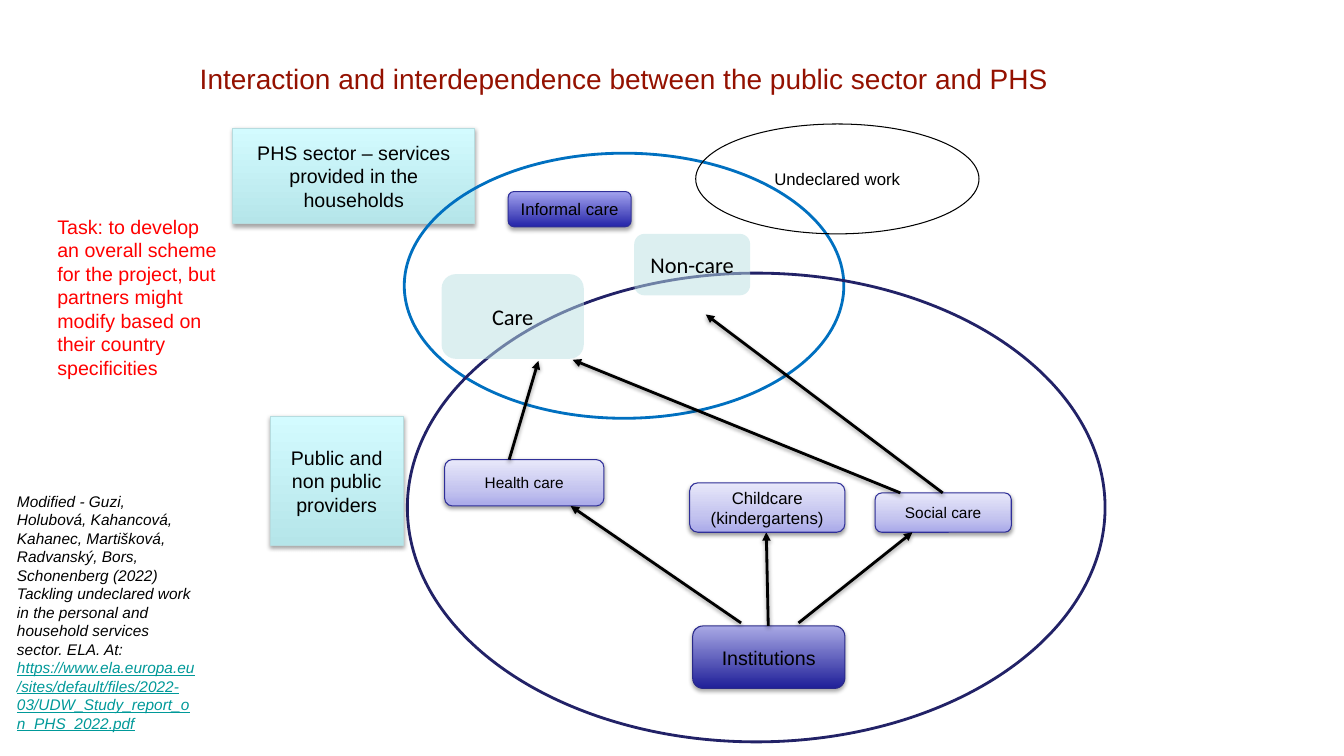
import copy

import pptx
import pptx.dml.color
import pptx.enum.shapes
import pptx.enum.text
import pptx.oxml
import pptx.oxml.ns
import pptx.util

PX = 9144  # 100 px to the inch
KIND = pptx.enum.shapes.MSO_SHAPE
ALIGN = pptx.enum.text.PP_ALIGN
ANCHOR = pptx.enum.text.MSO_ANCHOR
NS = pptx.oxml.ns.nsdecls("a")

# Each look: gradient from bottom to top, line colour, shadow opacity and distance
PALE = ([(0, "A9A9E9"), (35, "C4C4EF"), (100, "E8E8FA")], "2F2F98", 38, 1.6)
AQUA = ([(0, "B5E5E9"), (100, "D3FBFF")], "B6DCDF", 35, 1.8)
BLUE = ([(0, "2424A8"), (100, "A4A4EF")], "2F2F98", 35, 1.8)
NAVY = ([(0, "1F1F98"), (100, "A9A9E5")], "2A2A89", 35, 1.8)


def px(*vals):
    return [round(v * PX) for v in vals]


def color(code):
    return pptx.dml.color.RGBColor.from_string(code)


def style(run, size, code="000000", face="Arial", italic=None):
    font = run.font
    font.size, font.name, font.italic = pptx.util.Pt(size), face, italic
    font.color.rgb = color(code)


def write(shape, text, size, code="000000", face="Arial", align=ALIGN.CENTER,
          anchor=ANCHOR.MIDDLE):
    frame = shape.text_frame
    frame.word_wrap = True
    frame.vertical_anchor = anchor
    para = frame.paragraphs[0]
    para.text, para.alignment = text, align
    style(para.runs[0], size, code, face)


def shade(props, alpha, dist):
    """Put a soft shadow below a shape or a connector."""
    for old in props.findall(pptx.oxml.ns.qn("a:effectLst")):
        props.remove(old)
    blur, drop = pptx.util.Pt(3.1), pptx.util.Pt(dist)
    props.append(pptx.oxml.parse_xml(
        f'<a:effectLst {NS}><a:outerShdw blurRad="{blur}" dist="{drop}" '
        f'dir="5400000" rotWithShape="0"><a:srgbClr val="000000">'
        f'<a:alpha val="{alpha * 1000}"/></a:srgbClr></a:outerShdw></a:effectLst>'))


def add(slide, kind, box):
    shape = slide.shapes.add_shape(kind, *px(*box))
    shape.shadow.inherit = False
    return shape


def stroke(shape, code, width):
    shape.line.color.rgb = color(code)
    shape.line.width = pptx.util.Pt(width)


def block(slide, box, text, size, look, kind=KIND.ROUNDED_RECTANGLE):
    """A gradient box with a shadow."""
    stops, edge, alpha, dist = look
    shape = add(slide, kind, box)
    shape.fill.gradient()
    shape.fill.gradient_angle = 90
    ramp = shape.element.spPr.find(".//" + pptx.oxml.ns.qn("a:gsLst"))
    while len(ramp) < len(stops):
        ramp.append(copy.deepcopy(ramp[0]))
    for stop, (pos, code) in zip(shape.fill.gradient_stops, stops):
        stop.position, stop.color.rgb = pos / 100, color(code)
    stroke(shape, edge, 0.75)
    shade(shape.element.spPr, alpha, dist)
    write(shape, text, size)


def oval(slide, box, code, width, text=None):
    shape = add(slide, KIND.OVAL, box)
    shape.fill.background()
    stroke(shape, code, width)
    if text:
        write(shape, text, 12)


def veil(slide, box, text):
    """A half-transparent label."""
    shape = add(slide, KIND.ROUNDED_RECTANGLE, box)
    shape.fill.solid()
    shape.fill.fore_color.rgb = color("BBE0E3")
    tint = shape.element.spPr.find(".//" + pptx.oxml.ns.qn("a:srgbClr"))
    tint.append(pptx.oxml.parse_xml(f'<a:alpha {NS} val="50000"/>'))
    shape.line.fill.background()
    write(shape, text, 16, face="Calibri")


def arrow(slide, ends):
    line = slide.shapes.add_connector(
        pptx.enum.shapes.MSO_CONNECTOR.STRAIGHT, *px(*ends))
    stroke(line, "000000", 2)
    line.line._get_or_add_ln().append(
        pptx.oxml.parse_xml(f'<a:tailEnd {NS} type="triangle"/>'))
    shade(line.element.spPr, 38, 1.6)


def label(slide, box, text, size, code):
    shape = slide.shapes.add_textbox(*px(*box))
    write(shape, text, size, code, align=ALIGN.LEFT, anchor=ANCHOR.TOP)
    return shape.text_frame.paragraphs[0]


def header(slide, box):
    title = slide.shapes.title
    title.left, title.top, title.width, title.height = px(*box)
    write(title, "Interaction and interdependence between the public sector and PHS",
          20, "941100")


def scheme(slide, box):
    """The sectors, the care types and the arrows between them."""
    left, top = box

    def at(x, y, w, h):
        return left + x, top + y, w, h

    # Sectors
    block(slide, at(637, 366, 135, 39), "Social care", 11, PALE)
    block(slide, at(210, 333, 158, 46), "Health care", 11, PALE)
    block(slide, at(0, 4, 240, 95), "PHS sector – services provided in the households",
          14, AQUA, KIND.RECTANGLE)
    oval(slide, at(170, 29, 436, 263), "0070C0", 2)
    oval(slide, at(173, 148, 692, 465), "222267", 2)
    veil(slide, at(398, 109, 115, 61), "Non-care")
    block(slide, at(37, 290, 132, 128), "Public and non public providers", 14,
          AQUA, KIND.RECTANGLE)
    veil(slide, at(207, 149, 141, 84), "Care")
    block(slide, at(273, 67, 122, 35), "Informal care", 12, BLUE)
    block(slide, at(456, 498, 151, 62), "Institutions", 14, NAVY)

    # Arrows
    for x1, y1, x2, y2 in [(504, 495, 335, 379), (561, 495, 674, 405),
                           (274, 333, 303, 235), (704, 366, 469, 189),
                           (662, 366, 337, 234), (531, 498, 529, 405)]:
        arrow(slide, (left + x1, top + y1, left + x2, top + y2))

    oval(slide, at(459, 0, 281, 109), "000000", 0.75, "Undeclared work")
    block(slide, at(453, 356, 154, 49), "Childcare (kindergartens)", 12, PALE)


def source(slide, box):
    para = label(slide, box, "Modified - Guzi, Holubová, Kahancová, Kahanec, "
                 "Martišková, Radvanský, Bors, Schonenberg (2022) Tackling "
                 "undeclared work in the personal and household services "
                 "sector. ELA. At: ", 11, "000000")
    para.runs[0].font.italic = True
    link = para.add_run()
    link.text = ("https://www.ela.europa.eu/sites/default/files/2022-03/"
                 "UDW_Study_report_on_PHS_2022.pdf")
    style(link, 11, "009999", italic=True)
    link.font.underline = True


def main():
    deck = pptx.Presentation()
    deck.slide_width, deck.slide_height = px(1333, 750)
    slide = deck.slides.add_slide(deck.slide_layouts[5])
    header(slide, (19, 15, 1200, 125))
    scheme(slide, (231, 123))
    source(slide, (7, 483, 198, 251))
    label(slide, (47, 208, 182, 175), "Task: to develop an overall scheme for the "
          "project, but partners might modify based on their country specificities",
          14, "FF0000")
    deck.save("out.pptx")


if __name__ == "__main__":
    main()
